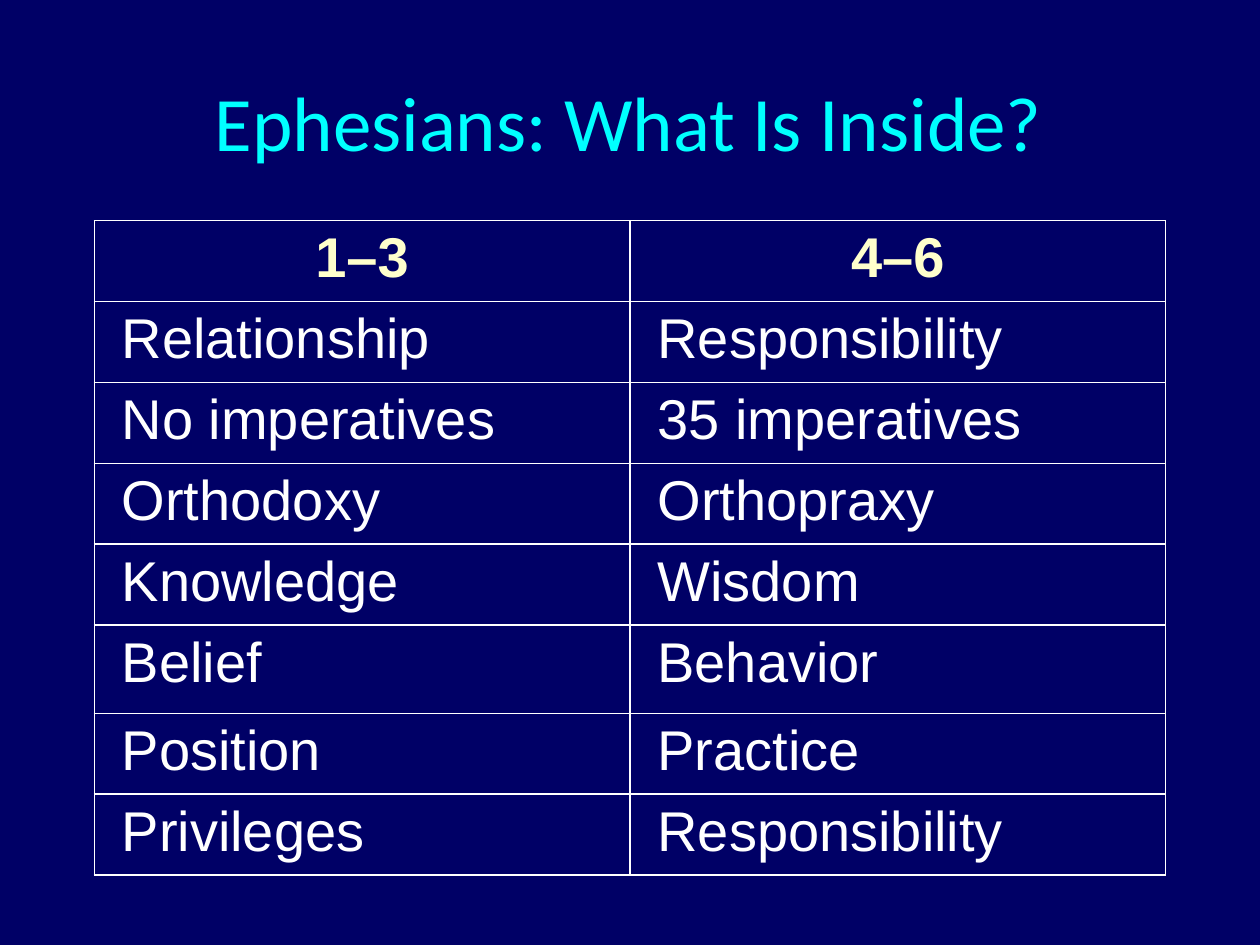
from lxml.etree import SubElement as Sub
from pptx import Presentation
from pptx.dml.color import RGBColor as Rgb
from pptx.enum.text import MSO_ANCHOR as Anchor, PP_ALIGN as Align
from pptx.oxml.ns import qn
from pptx.util import Cm, Pt

TITLE = "Ephesians: What Is Inside?"
ROWS = [
    ("1–3", "4–6"),
    ("Relationship", "Responsibility"),
    ("No imperatives", "35 imperatives"),
    ("Orthodoxy", "Orthopraxy"),
    ("Knowledge", "Wisdom"),
    ("Belief", "Behavior"),
    ("Position", "Practice"),
    ("Privileges", "Responsibility"),
]
COLORS = {"back": "000066", "title": "00FFFF", "head": "FFFFCC", "body": "FFFFFF", "line": "FFFFFF"}
FONTS = {
    "title": {"name": "Calibri", "size": Pt(44), "bold": False},
    "head": {"name": "Arial", "size": Pt(32), "bold": True},
    "body": {"name": "Arial", "size": Pt(32), "bold": False},
}
TALL = {"Belief": 1.78}
HIGH = 1.63
WIDE = 10.8


def style(para, role):
    for key, val in FONTS[role].items():
        setattr(para.font, key, val)
    para.font.color.rgb = Rgb.from_string(COLORS[role])


def space(para, share):
    gap = Sub(para._p.get_or_add_pPr(), qn("a:spcBef"))
    Sub(gap, qn("a:spcPct"), val=str(share * 1000))


def border(cell):
    props = cell._tc.get_or_add_tcPr()
    for side in ("lnL", "lnR", "lnT", "lnB"):
        line = Sub(props, qn("a:" + side), w=str(Pt(1)))
        fill = Sub(line, qn("a:solidFill"))
        Sub(fill, qn("a:srgbClr"), val=COLORS["line"])


def add_title(slide):
    title = slide.shapes.title
    place = {"left": Cm(4), "top": Cm(0.85), "width": Cm(17.35), "height": Cm(3.17)}
    for key, val in place.items():
        setattr(title, key, val)
    frame = title.text_frame
    frame.text = TITLE
    frame.vertical_anchor = Anchor.MIDDLE
    para = frame.paragraphs[0]
    para.alignment = Align.CENTER
    style(para, "title")


def fill_cell(cell, text, role):
    cell.text = text
    para = cell.text_frame.paragraphs[0]
    space(para, 20)
    style(para, role)
    if role == "head":
        para.alignment = Align.CENTER
    else:
        para._p.get_or_add_pPr().set("marL", str(Cm(0.3)))
    border(cell)
    cell.fill.background()


def add_grid(slide):
    highs = [TALL.get(row[0], HIGH) for row in ROWS]
    count = len(ROWS[0])
    grid = slide.shapes.add_table(
        len(ROWS), count, Cm(1.9), Cm(4.45), Cm(WIDE * count), Cm(sum(highs))
    ).table
    grid.first_row = grid.horz_banding = False
    for col in grid.columns:
        col.width = Cm(WIDE)
    for r, (row, high) in enumerate(zip(ROWS, highs)):
        grid.rows[r].height = Cm(high)
        for c, text in enumerate(row):
            fill_cell(grid.cell(r, c), text, "body" if r else "head")


def main():
    deck = Presentation()
    deck.slide_width, deck.slide_height = Cm(25.4), Cm(19.05)
    slide = deck.slides.add_slide(deck.slide_layouts[5])
    back = slide.background.fill
    back.solid()
    back.fore_color.rgb = Rgb.from_string(COLORS["back"])
    add_title(slide)
    add_grid(slide)
    deck.save("out.pptx")


if __name__ == "__main__":
    main()
